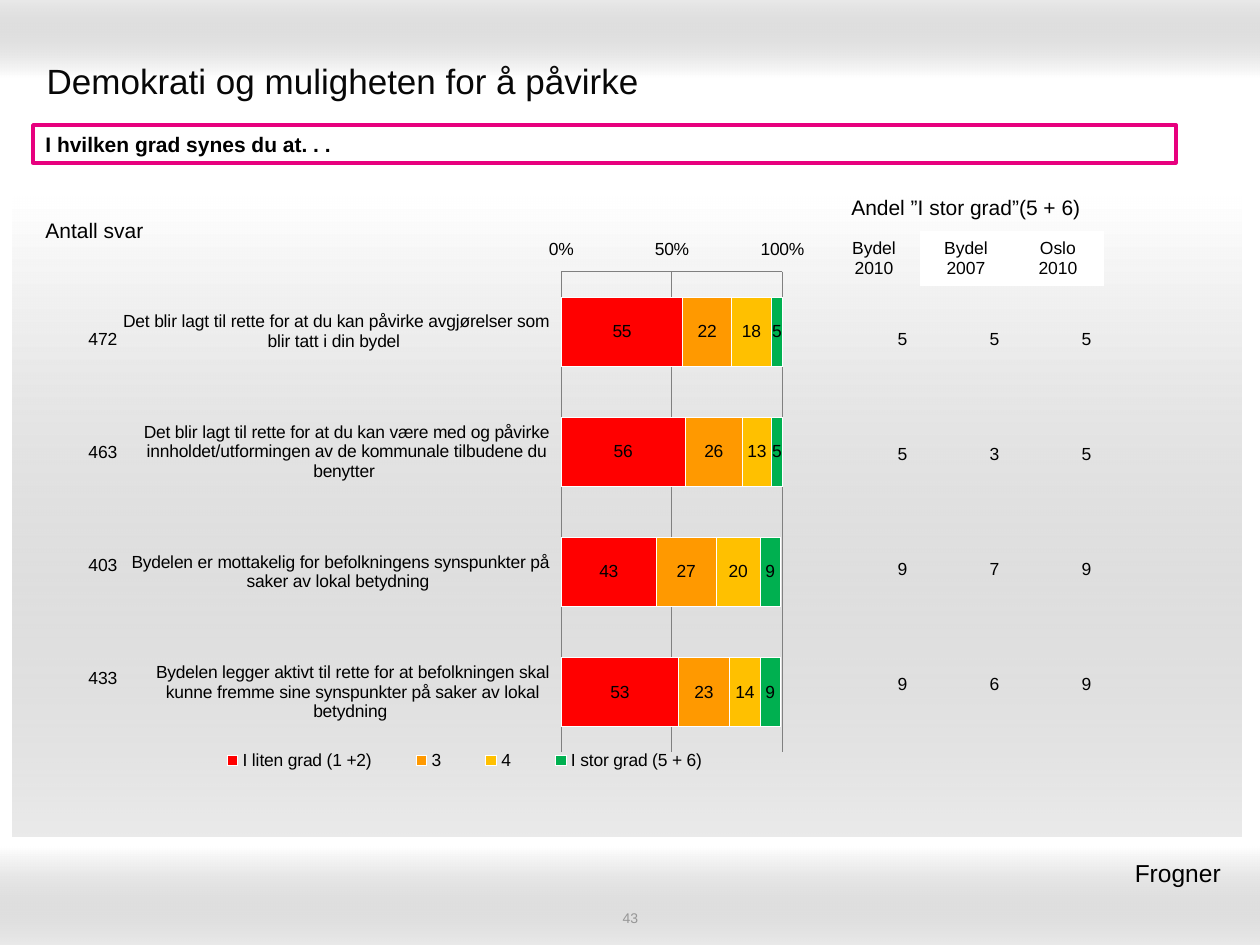
from lxml import etree
from pptx import Presentation
from pptx.chart.data import CategoryChartData
from pptx.dml.color import RGBColor
from pptx.enum.chart import (XL_CHART_TYPE, XL_LABEL_POSITION, XL_LEGEND_POSITION,
                             XL_TICK_LABEL_POSITION, XL_TICK_MARK)
from pptx.enum.shapes import MSO_SHAPE
from pptx.enum.text import MSO_ANCHOR, PP_ALIGN
from pptx.oxml.ns import qn
from pptx.util import Pt

PX = 914400 / 126
TITLE_ONLY = 5
NO_TABLE_STYLE = "{2D5ABB26-0587-4C30-8999-92F81FD0307C}"

LEFT, CENTER, RIGHT = PP_ALIGN.LEFT, PP_ALIGN.CENTER, PP_ALIGN.RIGHT
MIDDLE = MSO_ANCHOR.MIDDLE
RECTANGLE = MSO_SHAPE.RECTANGLE
LOW = XL_TICK_LABEL_POSITION.LOW
NO_TICK, TICK_INSIDE = XL_TICK_MARK.NONE, XL_TICK_MARK.INSIDE

BLACK = RGBColor(0x00, 0x00, 0x00)
TITLE_BLACK = RGBColor(0x08, 0x08, 0x08)
WHITE = RGBColor(0xFF, 0xFF, 0xFF)
SHADE = RGBColor(0x99, 0x99, 0x99)
NUMBER_GRAY = RGBColor(0x96, 0x96, 0x96)
GRID_GRAY = RGBColor(0x80, 0x80, 0x80)
MAGENTA = RGBColor(0xE7, 0x00, 0x7E)
RED = RGBColor(0xFF, 0x00, 0x00)
ORANGE = RGBColor(0xFF, 0x99, 0x00)
YELLOW = RGBColor(0xFF, 0xC0, 0x00)
GREEN = RGBColor(0x00, 0xB0, 0x50)

STATEMENTS = [
    "Det blir lagt til rette for at du kan påvirke avgjørelser som blir tatt i din bydel ",
    "Det blir lagt til rette for at du kan være med og påvirke "
    "innholdet/utformingen av de kommunale tilbudene du benytter ",
    "Bydelen er mottakelig for befolkningens synspunkter på saker av lokal betydning ",
    "Bydelen legger aktivt til rette for at befolkningen skal kunne fremme sine "
    "synspunkter på saker av lokal betydning ",
]
GRADES = [
    ("I liten grad (1 +2)", RED, (55, 56, 43, 53)),
    ("3", ORANGE, (22, 26, 27, 23)),
    ("4", YELLOW, (18, 13, 20, 14)),
    ("I stor grad (5 + 6)", GREEN, (5, 5, 9, 9)),
]
HIGH_SHARES = [("5", "5", "5"), ("5", "3", "5"), ("9", "7", "9"), ("9", "6", "9")]
SHARE_HEADS = [("Andel ”I stor grad”(5 + 6)", "", ""),
               ("Bydel\n2010", "Bydel\n2007", "Oslo\n2010")]
ANSWER_COUNTS = [("472",), ("463",), ("403",), ("433",)]


def px(length):
    return round(length * PX)


def set_values(target, values):
    for name, value in values.items():
        setattr(target, name, value)


def set_chart_layout(parent, index, inner, box):
    """Place a chart part by fractions of the chart: x, y, width, height."""
    for old in parent.findall(qn("c:layout")):
        parent.remove(old)
    layout = etree.Element(qn("c:layout"))
    manual = etree.SubElement(layout, qn("c:manualLayout"))
    settings = [("layoutTarget", "inner")] if inner else []
    settings += [("xMode", "edge"), ("yMode", "edge"), *zip("xywh", box)]
    for tag, value in settings:
        etree.SubElement(manual, qn("c:" + tag)).set("val", str(value))
    parent.insert(index, layout)


class SlideBuilder:
    def __init__(self, presentation, font_name):
        self.font_name = font_name
        self.slide = presentation.slides.add_slide(presentation.slide_layouts[TITLE_ONLY])
        self.shapes = self.slide.shapes

    def format_text(self, frame, size, color=BLACK, align=LEFT, bold=False):
        set_values(frame, {"word_wrap": True, "vertical_anchor": MIDDLE})
        for paragraph in frame.paragraphs:
            paragraph.alignment = align
            set_values(paragraph.font, {"name": self.font_name, "size": Pt(size), "bold": bold})
            paragraph.font.color.rgb = color

    def shaded_band(self, box, angle):
        band = self.shapes.add_shape(RECTANGLE, *map(px, box))
        band.shadow.inherit = False
        band.line.fill.background()
        band.fill.gradient()
        band.fill.gradient_angle = angle
        for stop, color in zip(band.fill.gradient_stops, (WHITE, SHADE)):
            stop.color.rgb = color
        shade = band._element.spPr.findall(".//" + qn("a:srgbClr"))[-1]
        etree.SubElement(shade, qn("a:alpha")).set("val", "20000")

    def title(self, text, box):
        title = self.shapes.title
        set_values(title, dict(zip(("left", "top", "width", "height"), map(px, box))))
        title.text_frame.text = text
        self.format_text(title.text_frame, 20, TITLE_BLACK)
        # Bring the title in front of the shaded bands
        self.shapes._spTree.append(title._element)

    def text(self, text, box, size, **style):
        frame = self.shapes.add_textbox(*map(px, box)).text_frame
        frame.text = text
        self.format_text(frame, size, **style)

    def framed_text(self, text, box):
        frame = self.shapes.add_shape(RECTANGLE, *map(px, box))
        frame.shadow.inherit = False
        frame.fill.solid()
        frame.fill.fore_color.rgb = WHITE
        frame.line.color.rgb = MAGENTA
        frame.line.width = Pt(2)
        frame.text_frame.text = text
        self.format_text(frame.text_frame, 12, bold=True)

    def table(self, rows, left, top, column_width, row_heights, align, size=10):
        columns = len(rows[0])
        table = self.shapes.add_table(len(rows), columns, px(left), px(top),
                                      px(column_width * columns), px(sum(row_heights))).table
        set_values(table, {"first_row": False, "horz_banding": False})
        table._tbl.tblPr.find(qn("a:tableStyleId")).text = NO_TABLE_STYLE
        for column in table.columns:
            column.width = px(column_width)
        for row, height, texts in zip(table.rows, row_heights, rows):
            row.height = px(height)
            for cell, text in zip(row.cells, texts):
                cell.fill.background()
                cell.text = text
                cell.vertical_anchor = MIDDLE
                self.format_text(cell.text_frame, size, align=align)
        return table

    def stacked_bars(self, categories, series_rows, box, plot_box, legend_box):
        data = CategoryChartData(number_format="0")
        data.categories = categories
        for name, _, values in series_rows:
            data.add_series(name, values)
        chart = self.shapes.add_chart(XL_CHART_TYPE.BAR_STACKED, *map(px, box), data).chart
        set_values(chart, {"has_title": False, "has_legend": True})
        set_values(chart.font, {"name": self.font_name, "size": Pt(10)})
        chart.font.color.rgb = BLACK

        plot = chart.plots[0]
        set_values(plot, {"gap_width": 75, "overlap": 100, "vary_by_categories": False})
        for series, (_, color, _) in zip(plot.series, series_rows):
            series.format.fill.solid()
            series.format.fill.fore_color.rgb = color
            series.format.line.color.rgb = WHITE
            set_values(series.data_labels, {
                "show_value": True, "number_format": "0", "number_format_is_linked": False,
                "position": XL_LABEL_POSITION.CENTER})

        set_values(chart.category_axis, {
            "reverse_order": True, "tick_label_position": LOW,
            "major_tick_mark": NO_TICK, "minor_tick_mark": NO_TICK})
        value_axis = chart.value_axis
        set_values(value_axis, {
            "minimum_scale": 0, "maximum_scale": 100, "major_unit": 50,
            "tick_label_position": LOW, "has_major_gridlines": True,
            "major_tick_mark": TICK_INSIDE, "minor_tick_mark": NO_TICK})
        set_values(value_axis.tick_labels, {
            "number_format": "General\\%", "number_format_is_linked": False})
        for line in (chart.category_axis.format.line, value_axis.format.line,
                     value_axis.major_gridlines.format.line):
            line.color.rgb = GRID_GRAY

        set_values(chart.legend, {
            "position": XL_LEGEND_POSITION.BOTTOM, "include_in_layout": False})
        set_chart_layout(chart._chartSpace.chart.plotArea, 0, True, plot_box)
        set_chart_layout(chart.legend._element, 1, False, legend_box)


def main():
    presentation = Presentation()
    set_values(presentation, {"slide_width": px(1260), "slide_height": px(945)})
    page = SlideBuilder(presentation, "Arial")

    page.shaded_band((0, 0, 1260, 78), 90)
    page.shaded_band((0, 847, 1260, 98), 270)
    page.shaded_band((13, 197, 1228, 640), 270)

    page.title("Demokrati og muligheten for å påvirke", (34, 46, 1191, 69))
    page.text("43", (431, 909, 399, 18), 8, color=NUMBER_GRAY, align=CENTER)
    page.framed_text("I hvilken grad synes du at. . .", (33, 125, 1143, 38))

    page.stacked_bars(STATEMENTS, GRADES, (123, 226, 694, 572),
                      plot_box=(0.63, 0.08, 0.32, 0.84), legend_box=(0.09, 0.91, 0.8, 0.05))

    page.table(HIGH_SHARES, 828, 282, 92, [115] * 4, RIGHT)
    share_heads = page.table(SHARE_HEADS, 828, 185, 92, [46, 55], CENTER)
    heading = share_heads.cell(0, 0)
    heading.merge(share_heads.cell(0, 2))
    page.format_text(heading.text_frame, 12, align=CENTER)
    for column in (1, 2):
        comparison = share_heads.cell(1, column)
        comparison.fill.solid()
        comparison.fill.fore_color.rgb = WHITE

    page.table(ANSWER_COUNTS, 65, 283, 65, [113] * 4, RIGHT)
    page.table([("Antall svar",)], 5, 194, 179, [74], CENTER, size=12)
    page.text("Frogner ", (769, 851, 471, 43), 14, align=RIGHT)

    presentation.save("out.pptx")


if __name__ == "__main__":
    main()
